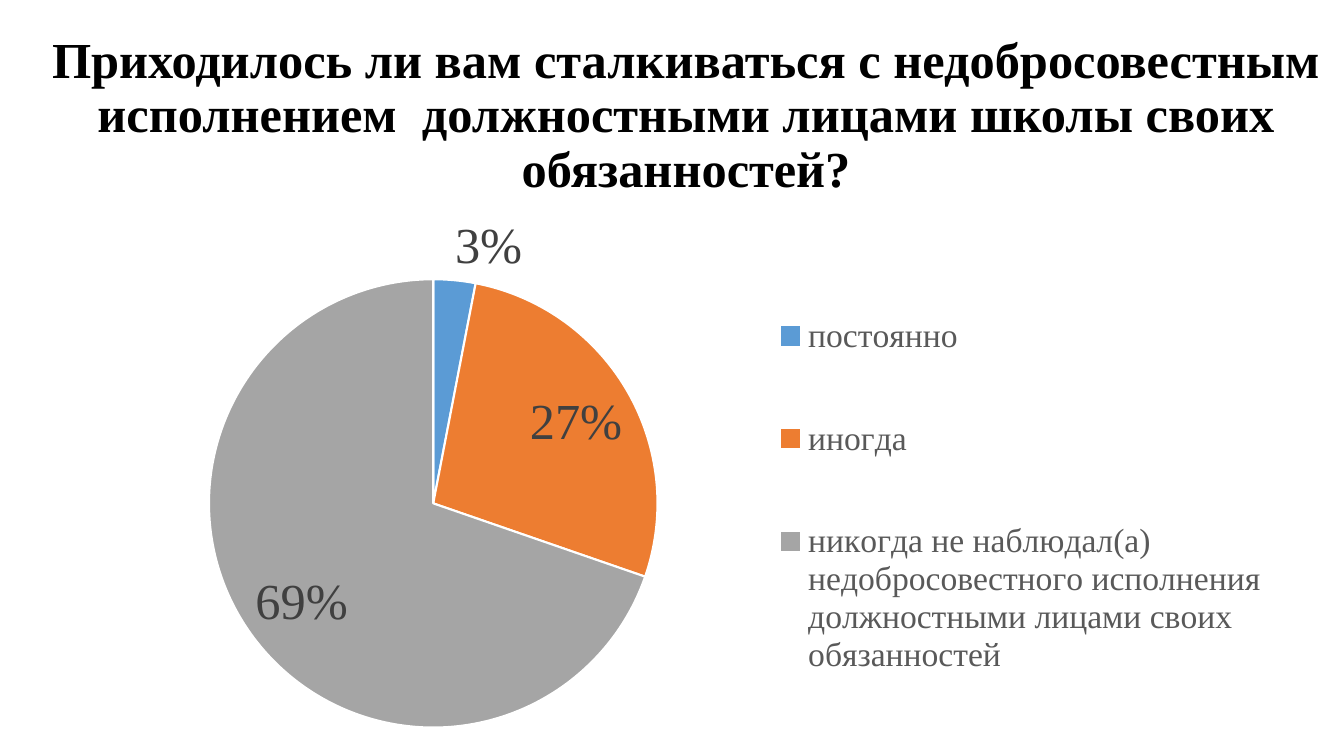
from lxml import etree
from pptx import Presentation
from pptx.chart.data import CategoryChartData
from pptx.dml.color import RGBColor
from pptx.enum.chart import XL_CHART_TYPE, XL_LABEL_POSITION, XL_LEGEND_POSITION
from pptx.enum.text import MSO_ANCHOR, PP_ALIGN
from pptx.oxml.ns import qn
from pptx.util import Inches, Pt

PIE = XL_CHART_TYPE.PIE
RIGHT = XL_LEGEND_POSITION.RIGHT
INSIDE, OUTSIDE = XL_LABEL_POSITION.INSIDE_END, XL_LABEL_POSITION.OUTSIDE_END
MIDDLE, CENTER = MSO_ANCHOR.MIDDLE, PP_ALIGN.CENTER

BLACK = RGBColor(0x00, 0x00, 0x00)
WHITE = RGBColor(0xFF, 0xFF, 0xFF)
DARK = RGBColor(0x40, 0x40, 0x40)
GREY = RGBColor(0x59, 0x59, 0x59)
BLUE = RGBColor(0x5B, 0x9B, 0xD5)
ORANGE = RGBColor(0xED, 0x7D, 0x31)
SILVER = RGBColor(0xA5, 0xA5, 0xA5)

TITLE = ("Приходилось ли вам сталкиваться с недобросовестным исполнением  "
         "должностными лицами школы своих обязанностей?")
ANSWERS = [
    ("постоянно", 3, BLUE, OUTSIDE),
    ("иногда", 27, ORANGE, INSIDE),
    ("никогда не наблюдал(а) недобросовестного исполнения "
     "должностными лицами своих обязанностей", 69, SILVER, INSIDE),
]
SERIF = "Times New Roman"
HEAD = {"name": SERIF, "size": Pt(36), "bold": True}
LABEL = {"name": SERIF, "size": Pt(36)}
KEY = {"name": SERIF, "size": Pt(24)}

WIDE, HIGH = Inches(13.33), Inches(7.5)
TITLE_BOX = [Inches(n) for n in (0.16, 0.29, 13.29, 1.73)]
CHART_BOX = [Inches(n) for n in (1.21, 2.02, 11.65, 5.36)]
PIE_PART = {"x": 0.07, "y": 0.14, "w": 0.39, "h": 0.83}
KEY_PART = {"x": 0.55, "y": 0.09, "w": 0.43, "h": 0.9}


def style(font, look, color):
    for name, value in look.items():
        setattr(font, name, value)
    font.color.rgb = color


def place(item, box):
    item.left, item.top, item.width, item.height = box


def lay_out(node, index, part, inner=False):
    for old in node.findall(qn("c:layout")):
        node.remove(old)
    layout = etree.Element(qn("c:layout"))
    manual = etree.SubElement(layout, qn("c:manualLayout"))
    rules = [("layoutTarget", "inner")] if inner else []
    rules += [("xMode", "edge"), ("yMode", "edge")]
    rules += [(key, str(share)) for key, share in part.items()]
    for tag, value in rules:
        etree.SubElement(manual, qn("c:" + tag)).set("val", value)
    node.insert(index, layout)


def add_title(slide):
    title = slide.shapes.title
    place(title, TITLE_BOX)
    frame = title.text_frame
    frame.text = TITLE
    frame.word_wrap = True
    frame.vertical_anchor = MIDDLE
    para = frame.paragraphs[0]
    para.alignment = CENTER
    para.line_spacing = 0.9
    style(para.runs[0].font, HEAD, BLACK)


def add_pie(slide):
    names, values, colors, spots = zip(*ANSWERS)
    data = CategoryChartData()
    data.categories = names
    data.add_series("Series 1", values)
    chart = slide.shapes.add_chart(PIE, *CHART_BOX, data).chart
    style(chart.font, {"name": "Calibri", "size": Pt(10)}, BLACK)
    chart.has_title = False
    chart.has_legend = True
    legend = chart.legend
    legend.position = RIGHT
    legend.include_in_layout = False
    style(legend.font, KEY, GREY)

    plot = chart.plots[0]
    plot.vary_by_categories = True
    series = plot.series[0]
    labels = series.data_labels
    labels.show_value = True
    labels.show_percentage = False
    labels.number_format = '0"%"'
    labels.number_format_is_linked = False
    labels.position = INSIDE
    style(labels.font, LABEL, DARK)
    for index, color in enumerate(colors):
        point = series.points[index]
        point.format.fill.solid()
        point.format.fill.fore_color.rgb = color
        point.format.line.color.rgb = WHITE
        point.format.line.width = Pt(1.5)
        if spots[index] != INSIDE:
            tag = point.data_label
            tag.position = spots[index]
            style(tag.font, LABEL, DARK)

    space = chart.element
    lay_out(space.find(".//" + qn("c:plotArea")), 0, PIE_PART, True)
    lay_out(space.find(".//" + qn("c:legend")), 1, KEY_PART)


def main():
    deck = Presentation()
    deck.slide_width, deck.slide_height = WIDE, HIGH
    slide = deck.slides.add_slide(deck.slide_layouts[5])
    add_title(slide)
    add_pie(slide)
    deck.save("out.pptx")


if __name__ == "__main__":
    main()
